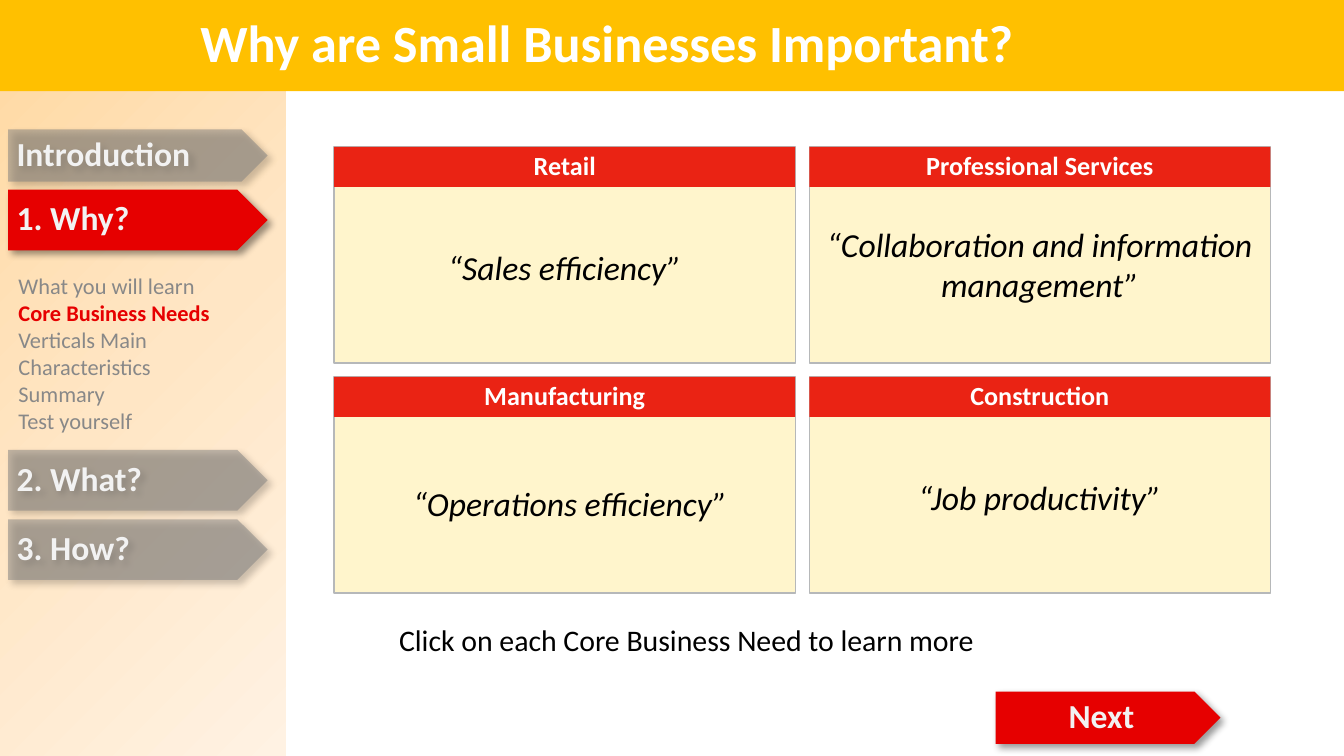
from copy import deepcopy
from dataclasses import dataclass

from lxml import etree
from pptx import Presentation
from pptx.dml import color
from pptx.enum import shapes, text
from pptx.oxml import ns
from pptx.util import Pt


@dataclass(frozen=True)
class Theme:
    font: str = "Calibri"
    white: str = "FFFFFF"
    black: str = "000000"
    banner: str = "FFC000"
    accent: str = "E60000"
    card_header: str = "EA2314"
    card_body: str = "FFF5CC"
    card_line: str = "B6B8B9"
    button_text: str = "F2F2F2"
    inactive: str = "808080"
    muted: str = "888888"
    sidebar: tuple = ((0, "FFD8A0"), (0.5, "FFE6C5"), (1, "FFF2E3"))
    title_size: float = 28
    large_size: float = 18
    caption_size: float = 16
    header_size: float = 14
    menu_size: float = 12


THEME = Theme()
CENTER = text.PP_ALIGN.CENTER
MIDDLE = text.MSO_ANCHOR.MIDDLE


def rgb(value):
    return color.RGBColor.from_string(value)


def add_child(parent, tag, **attributes):
    return etree.SubElement(parent, ns.qn(tag), attributes)


def write(shape, lines, size, ink, insets=(0, 0, 0, 0), anchor=text.MSO_ANCHOR.TOP,
          align=text.PP_ALIGN.LEFT, spacing=None, wrap=True, **font_format):
    """Fill a shape with paragraphs; insets run left, top, right, bottom."""
    frame = shape.text_frame
    frame.word_wrap = wrap
    frame.vertical_anchor = anchor
    for side, inset in zip(("left", "top", "right", "bottom"), insets):
        setattr(frame, f"margin_{side}", Pt(inset))
    frame.text = "\n".join(lines)
    values = {"name": THEME.font, "size": Pt(size), **font_format}
    for paragraph in frame.paragraphs:
        paragraph.alignment = align
        paragraph.line_spacing = spacing
        for run in paragraph.runs:
            for name, value in values.items():
                setattr(run.font, name, value)
            run.font.color.rgb = rgb(ink)
    return frame


def add_box(parent, box, fill=None, line=None, kind=shapes.MSO_SHAPE.RECTANGLE):
    shape = parent.shapes.add_shape(kind, *map(Pt, box))
    shape.shadow.inherit = False
    if fill:
        shape.fill.solid()
        shape.fill.fore_color.rgb = rgb(fill)
    if line:
        shape.line.color.rgb = rgb(line)
        shape.line.width = Pt(0.75)
    else:
        shape.line.fill.background()
    return shape


def add_text(slide, box, lines, size, ink, **options):
    return write(slide.shapes.add_textbox(*map(Pt, box)), lines, size, ink, **options)


def add_button(parent, box, label, active=True, align=text.PP_ALIGN.LEFT):
    fill = THEME.accent if active else THEME.inactive
    shape = add_box(parent, box, fill, kind=shapes.MSO_SHAPE.PENTAGON)
    properties = shape._element.spPr
    if not active:
        add_child(properties.find(f".//{ns.qn('a:srgbClr')}"), "a:alpha", val="50000")
    shadow = add_child(properties.find(ns.qn("a:effectLst")), "a:outerShdw",
                       blurRad=str(Pt(4)), dist=str(Pt(3)), dir="2700000",
                       algn="tl", rotWithShape="0")
    add_child(add_child(shadow, "a:srgbClr", val=THEME.black), "a:alpha", val="40000")
    left_inset = 0.7 if align == CENTER else 4.5
    write(shape, [label], THEME.large_size, THEME.button_text,
          (left_inset, 0.7, 0.7, 0.7), MIDDLE, align, 0.9, bold=True)


def add_card(slide, box, header, need, insets):
    left, top, width, height = box
    group = slide.shapes.add_group_shape()
    body = add_box(group, box, THEME.card_body, THEME.card_line)
    write(body, [need], THEME.large_size, THEME.black, insets, MIDDLE, CENTER, italic=True)
    heading = add_box(group, (left, top, width, 21.5), THEME.card_header)
    write(heading, [header], THEME.header_size, THEME.white, (5.8, 2.9, 5.8, 2.9),
          MIDDLE, CENTER, 0.9, wrap=False, bold=True)


def add_cards(slide, box):
    left, top, width, height = box
    gap = 7.5
    card_width, card_height = (width - gap) / 2, (height - gap) / 2
    cards = (
        ("Retail", "“Sales efficiency”", (5.8, 20.6, 5.8, 7.2)),
        ("Professional Services", "“Collaboration and information management”",
         (5.8, 17, 5.8, 7.2)),
        ("Manufacturing", "“Operations efficiency”", (5.8, 22.8, 0, 2.9)),
        ("Construction", "“Job productivity”", (5.8, 20.6, 5.8, 7.2)),
    )
    for index, (header, need, insets) in enumerate(cards):
        row, column = divmod(index, 2)
        place = (left + column * (card_width + gap), top + row * (card_height + gap),
                 card_width, card_height)
        add_card(slide, place, header, need, insets)


def add_sidebar(slide, box):
    left, top, width, height = box
    # Graded panel
    panel = add_box(slide, box)
    panel.fill.gradient()
    panel.fill.gradient_angle = 315
    stop_list = panel._element.spPr.find(f".//{ns.qn('a:gsLst')}")
    stop_list.insert(1, deepcopy(stop_list[0]))
    for stop, (position, value) in zip(panel.fill.gradient_stops, THEME.sidebar):
        stop.position = position
        stop.color.rgb = rgb(value)

    # Section buttons
    buttons = (
        ("Introduction", 69.3, 28, False),
        ("1. Why?", 101.6, 32.5, True),
        ("2. What?", 241, 32.5, False),
        ("3. How?", 278.2, 32.5, False),
    )
    for label, offset, button_height, active in buttons:
        add_button(slide, (left + 4.4, top + offset, 139, button_height), label, active)

    # Topics of the open section
    topics = ("What you will learn", "Core Business Needs",
              "Verticals Main Characteristics", "Summary", "Test yourself")
    frame = add_text(slide, (left + 9.9, top + 146, 141, height - 146), topics,
                     THEME.menu_size, THEME.muted)
    current = frame.paragraphs[1].runs[0].font
    current.bold = True
    current.color.rgb = rgb(THEME.accent)


def add_banner(slide, box):
    left, top, width, height = box
    add_box(slide, box, THEME.banner)
    add_text(slide, (left + 107.3, top - 2, 514, height - 0.5),
             ["Why are Small Businesses Important?"], THEME.title_size, THEME.white,
             anchor=MIDDLE, bold=True)


def add_footer(slide, box):
    left, top, width, height = box
    add_text(slide, (left + 34.8, top, 330, 24),
             ["Click on each Core Business Need to learn more"],
             THEME.caption_size, THEME.black)
    add_button(slide, (left + 354.3, top + 37.5, 120.5, 28), "Next", align=CENTER)


def main():
    presentation = Presentation()
    presentation.slide_width, presentation.slide_height = Pt(720), Pt(405)
    slide = presentation.slides.add_slide(presentation.slide_layouts[6])
    add_cards(slide, (179, 78.7, 501.6, 239))
    add_footer(slide, (179, 333, 501.6, 72))
    add_sidebar(slide, (0, 0, 153.2, 405))
    add_banner(slide, (0, 0, 720, 48.8))
    presentation.save("out.pptx")


if __name__ == "__main__":
    main()
